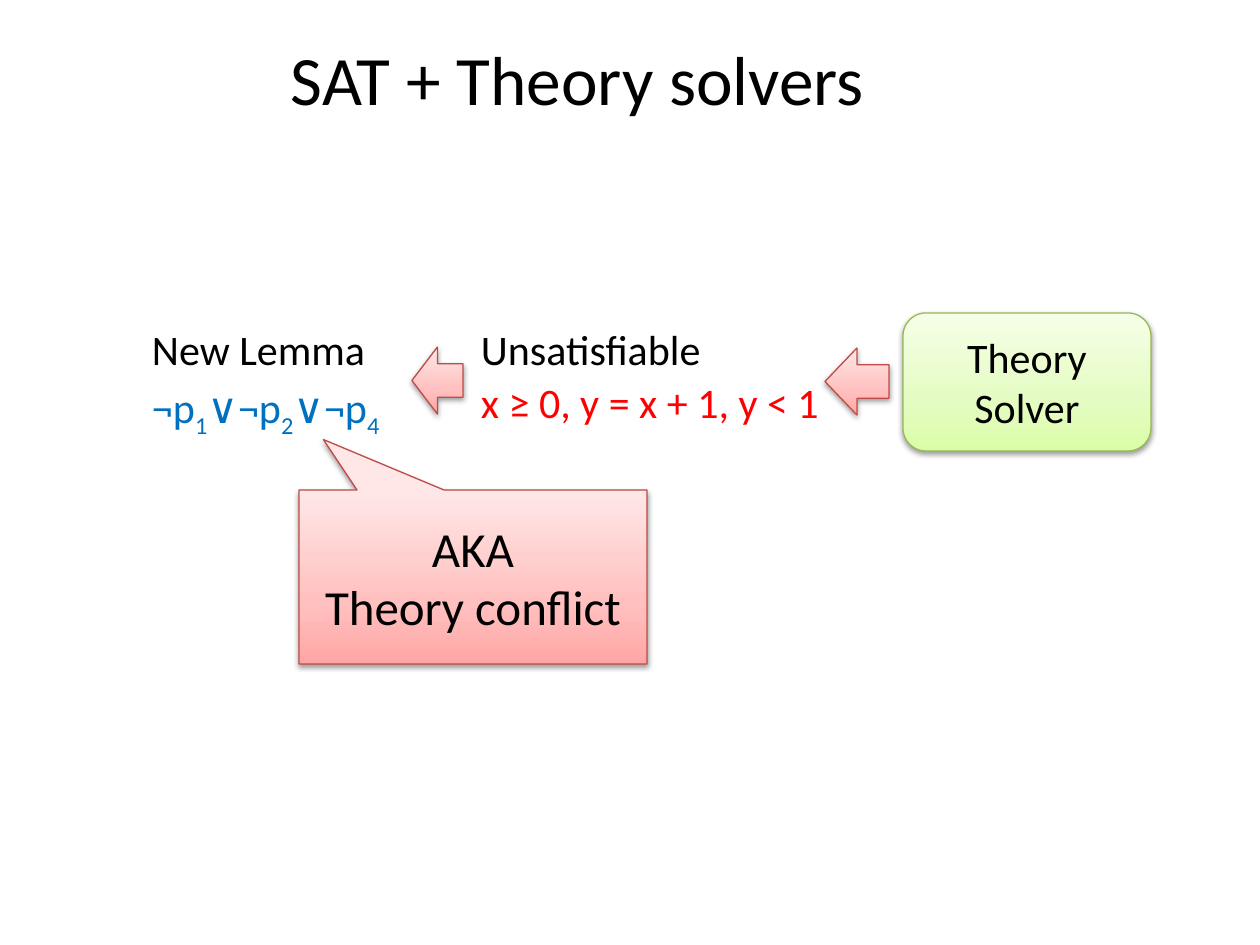
from dataclasses import dataclass

from lxml.etree import SubElement
from pptx import Presentation
from pptx.dml.color import RGBColor
from pptx.enum.shapes import MSO_SHAPE
from pptx.enum.text import MSO_ANCHOR, MSO_AUTO_SIZE, PP_ALIGN
from pptx.oxml.ns import qn
from pptx.util import Emu, Pt

PX_PER_INCH = 126
EMU_PER_INCH = 914400


@dataclass(frozen=True)
class Theme:
    font: str = "Calibri"
    text: str = "000000"
    unsat: str = "FF0000"
    lemma: str = "0070C0"
    title_size: float = 39.6
    body_size: float = 24
    callout_size: float = 28
    # Gradient stops run from the bottom of a shape to its top
    red: tuple = ("FFA6A5", "FFC0BF", "FFE7E7")
    red_line: str = "BF4C48"
    green: tuple = ("DAFDA7", "E4FCC2", "F5FFE7")
    green_line: str = "98B955"


THEME = Theme()


def px(length):
    return Emu(round(length * EMU_PER_INCH / PX_PER_INCH))


def place(box):
    return [px(length) for length in box]


def add_run(paragraph, text, size, color=THEME.text, subscript=False):
    run = paragraph.add_run()
    run.text = text
    run.font.name = THEME.font
    run.font.size = Pt(size)
    run.font.color.rgb = RGBColor.from_string(color)
    if subscript:
        run.font._element.set("baseline", "-25000")


def next_paragraph(frame, index):
    return frame.paragraphs[0] if index == 0 else frame.add_paragraph()


def add_gradient(shape, colors):
    shape.fill.gradient()
    gradient = shape._element.spPr.find(qn("a:gradFill"))
    stops = gradient.find(qn("a:gsLst"))
    for stop in list(stops):
        stops.remove(stop)
    for position, color in zip((0, 35000, 100000), colors):
        stop = SubElement(stops, qn("a:gs"), pos=str(position))
        SubElement(stop, qn("a:srgbClr"), val=color)
    gradient.find(qn("a:lin")).set("ang", "16200000")


def add_shadow(shape):
    shape.shadow.inherit = False
    effects = shape._element.spPr.find(qn("a:effectLst"))
    shadow = SubElement(effects, qn("a:outerShdw"), blurRad="40000", dist="20000",
                        dir="5400000", rotWithShape="0")
    color = SubElement(shadow, qn("a:srgbClr"), val="000000")
    SubElement(color, qn("a:alpha"), val="38000")


def add_block(slide, kind, box, colors, line, lines=(), size=THEME.body_size):
    shape = slide.shapes.add_shape(kind, *place(box))
    add_gradient(shape, colors)
    shape.line.color.rgb = RGBColor.from_string(line)
    shape.line.width = Pt(0.75)
    add_shadow(shape)
    frame = shape.text_frame
    frame.word_wrap = True
    frame.vertical_anchor = MSO_ANCHOR.MIDDLE
    frame.margin_left = frame.margin_right = px(15)
    frame.margin_top = frame.margin_bottom = px(8)
    for index, text in enumerate(lines):
        paragraph = next_paragraph(frame, index)
        paragraph.alignment = PP_ALIGN.CENTER
        add_run(paragraph, text, size)
    return shape


def add_statement(slide, box, heading, formula, color):
    """Heading over a formula, given as (text, subscript) parts."""
    frame = slide.shapes.add_textbox(*place(box)).text_frame
    frame.word_wrap = True
    frame.auto_size = MSO_AUTO_SIZE.SHAPE_TO_FIT_TEXT
    frame.margin_left = frame.margin_right = 0
    frame.margin_top = frame.margin_bottom = 0
    rows = ([(heading, False)], THEME.text), (formula, color)
    for index, (parts, row_color) in enumerate(rows):
        paragraph = next_paragraph(frame, index)
        paragraph.line_spacing = 0.9
        paragraph.space_before = Pt(THEME.body_size * 0.2)
        properties = paragraph._p.get_or_add_pPr()
        properties.set("marL", str(px(53)))
        properties.set("indent", str(-px(53)))
        for text, subscript in parts:
            add_run(paragraph, text, THEME.body_size, row_color, subscript)


def add_title(slide, box, text):
    title = slide.shapes.title
    title.left, title.top, title.width, title.height = place(box)
    frame = title.text_frame
    frame.vertical_anchor = MSO_ANCHOR.MIDDLE
    paragraph = frame.paragraphs[0]
    paragraph.alignment = PP_ALIGN.CENTER
    add_run(paragraph, text, THEME.title_size)


def add_flow(slide, box):
    """Theory solver at the right, leading left to the new lemma."""
    left, top, width, height = box
    # Theory solver
    add_block(slide, MSO_SHAPE.ROUNDED_RECTANGLE, (left + width - 248, top, 248, height),
              THEME.green, THEME.green_line, ("Theory", "Solver"))
    # Arrows between the steps
    for offset, arrow_top, arrow_width in ((673, 35, 64), (260, 34, 51)):
        add_block(slide, MSO_SHAPE.LEFT_ARROW,
                  (left + offset, top + arrow_top, arrow_width, 67),
                  THEME.red, THEME.red_line)
    # Unsatisfiable set and the lemma learned from it
    add_statement(slide, (left + 329, top + 16, 344, 102), "Unsatisfiable",
                  [("x ≥ 0, y = x + 1, y < 1", False)], THEME.unsat)
    add_statement(slide, (left, top + 16, 344, 214), "New Lemma",
                  [("¬p", False), ("1", True), ("∨¬p", False), ("2", True),
                   ("∨¬p", False), ("4", True)], THEME.lemma)


def add_callout(slide, box):
    callout = add_block(slide, MSO_SHAPE.RECTANGULAR_CALLOUT, box, THEME.red,
                        THEME.red_line, ("AKA", "Theory conflict"), THEME.callout_size)
    callout.adjustments[0] = -0.43
    callout.adjustments[1] = -0.79


def main():
    presentation = Presentation()
    presentation.slide_width, presentation.slide_height = px(1260), px(945)
    slide = presentation.slides.add_slide(presentation.slide_layouts[5])
    add_title(slide, (0, 32, 1155, 92), "SAT + Theory solvers")
    add_flow(slide, (152, 313, 999, 138))
    add_callout(slide, (299, 490, 348, 174))
    presentation.save("out.pptx")


if __name__ == "__main__":
    main()
